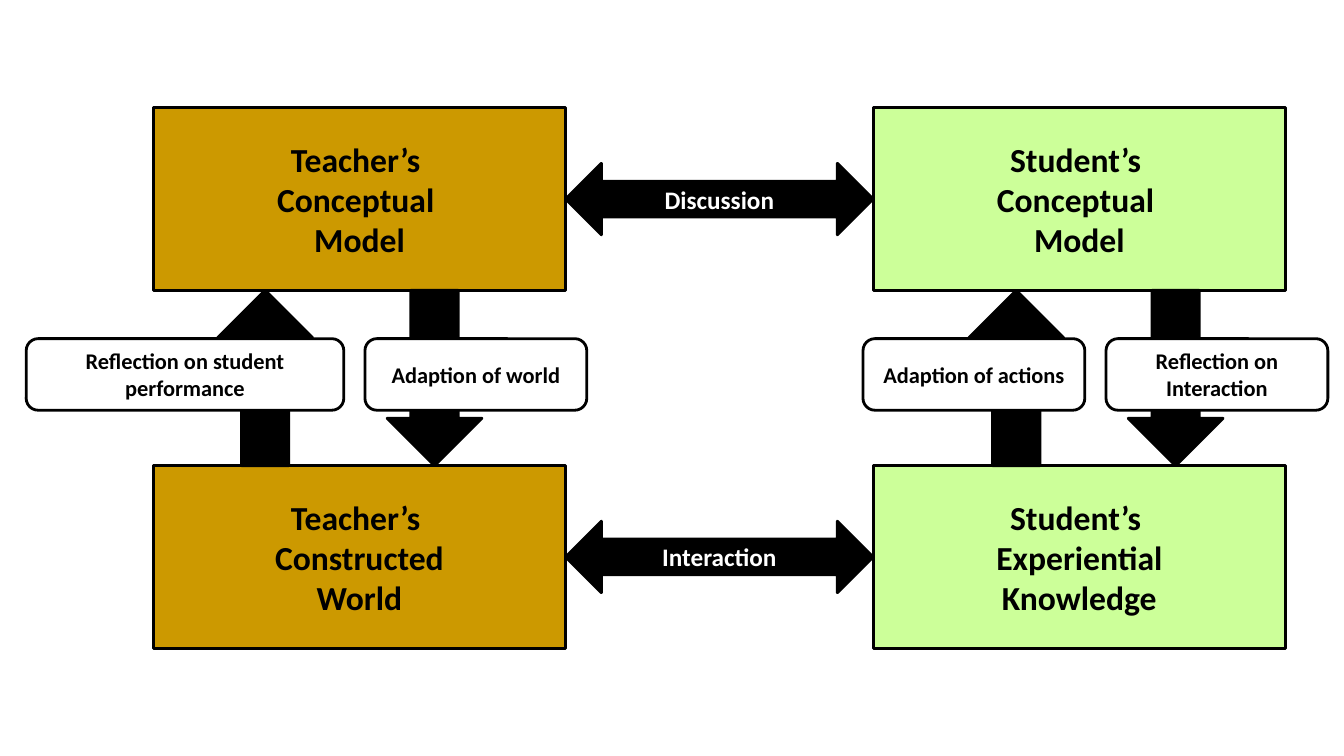
"""Build a slide on the dialogue between teacher and student models."""
import pptx
import pptx.dml.color
import pptx.enum.shapes
import pptx.enum.text
import pptx.util

SHAPES = pptx.enum.shapes.MSO_SHAPE
SLIDE_WIDTH, SLIDE_HEIGHT = 13.33, 7.5
BLACK, WHITE = "000000", "FFFFFF"
COLUMNS, ROWS = (1.52, 8.66), (1.07, 4.62)
BOX_WIDTH, BOX_HEIGHT = 4.09, 1.81
ARROW_THICKNESS, LABEL_HEIGHT, LABEL_TOP = 0.94, 0.71, 3.36
UP, DOWN = 270, 90

BOX_FILLS = ("CC9900", "CCFF99")
BOXES = (
    (("Teacher’s ", "Conceptual ", "Model"), ("Student’s ", "Conceptual ", "Model")),
    (("Teacher’s ", "Constructed", "World"), ("Student’s ", "Experiential", "Knowledge")),
)
EXCHANGES = ("Discussion", "Interaction")
FLOWS = ((2.63, UP), (10.08, UP), (11.66, DOWN), (4.31, DOWN))
LABELS = (
    ("Reflection on Interaction", 10.97, 2.2),
    ("Adaption of actions", 8.56, 2.2),
    ("Adaption of world", 3.62, 2.2),
    ("Reflection on student performance", 0.26, 3.15),
)


def color(value):
    """Return the colour for a hex string."""
    return pptx.dml.color.RGBColor.from_string(value)


def add_block(slide, kind, bounds, fill, lines=(), size=16, ink=BLACK, rotation=0):
    """Add an outlined shape with centred bold lines of text."""
    shape = slide.shapes.add_shape(kind, *map(pptx.util.Inches, bounds))
    shape.shadow.inherit = False
    shape.rotation = rotation
    shape.fill.solid()
    shape.fill.fore_color.rgb = color(fill)
    shape.line.color.rgb = color(BLACK)
    shape.line.width = pptx.util.Pt(2)
    frame = shape.text_frame
    frame.word_wrap = True
    frame.vertical_anchor = pptx.enum.text.MSO_ANCHOR.MIDDLE
    font_format = {"name": "Calibri", "size": pptx.util.Pt(size), "bold": True}
    for index, line in enumerate(lines):
        paragraph = frame.add_paragraph() if index else frame.paragraphs[0]
        paragraph.alignment = pptx.enum.text.PP_ALIGN.CENTER
        run = paragraph.add_run()
        run.text = line
        for name, value in font_format.items():
            setattr(run.font, name, value)
        run.font.color.rgb = color(ink)


def main():
    """Compose the slide and save it."""
    presentation = pptx.Presentation()
    presentation.slide_width = pptx.util.Inches(SLIDE_WIDTH)
    presentation.slide_height = pptx.util.Inches(SLIDE_HEIGHT)
    slide = presentation.slides.add_slide(presentation.slide_layouts[6])

    for top, row in zip(ROWS, BOXES):
        for left, fill, lines in zip(COLUMNS, BOX_FILLS, row):
            bounds = (left, top, BOX_WIDTH, BOX_HEIGHT)
            add_block(slide, SHAPES.RECTANGLE, bounds, fill, lines, 24)

    gap_left = COLUMNS[0] + BOX_WIDTH
    gap_width = COLUMNS[1] - gap_left
    for top, text in zip(ROWS, EXCHANGES):
        arrow_top = top + (BOX_HEIGHT - LABEL_HEIGHT) / 2
        bounds = (gap_left, arrow_top, gap_width, LABEL_HEIGHT)
        add_block(slide, SHAPES.LEFT_RIGHT_ARROW, bounds, BLACK, [text], 18, WHITE)

    gap_top = ROWS[0] + BOX_HEIGHT
    gap_height = ROWS[1] - gap_top
    arrow_top = gap_top + (gap_height - ARROW_THICKNESS) / 2
    for center, rotation in FLOWS:
        bounds = (center - gap_height / 2, arrow_top, gap_height, ARROW_THICKNESS)
        add_block(slide, SHAPES.RIGHT_ARROW, bounds, BLACK, rotation=rotation)

    for text, left, width in LABELS:
        bounds = (left, LABEL_TOP, width, LABEL_HEIGHT)
        add_block(slide, SHAPES.ROUNDED_RECTANGLE, bounds, WHITE, [text])

    presentation.save("out.pptx")


if __name__ == "__main__":
    main()
